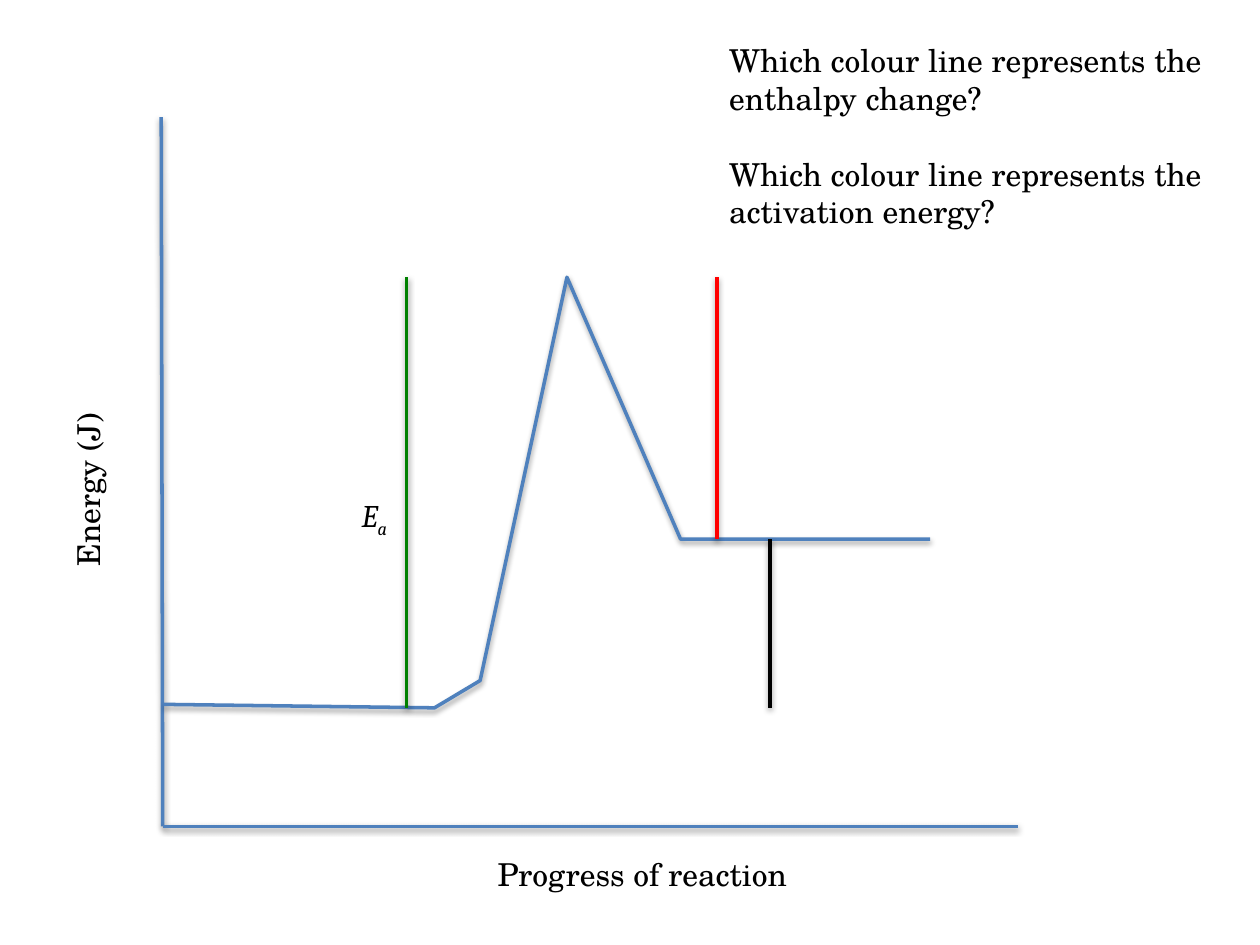
from lxml.etree import SubElement
from pptx import Presentation
from pptx.dml.color import RGBColor
from pptx.enum.shapes import MSO_CONNECTOR as Connector
from pptx.enum.text import MSO_AUTO_SIZE as AutoSize
from pptx.oxml.ns import qn
from pptx.util import Cm, Pt

BLUE, GREEN, RED, BLACK = "4F81BD", "008000", "FF0000", "000000"
SERIF = "TeX Gyre Schola"


def colour(code):
    """Turn a hex string into a colour."""
    return RGBColor.from_string(code)


def style_line(shape, code):
    """Give a line its colour, width and soft shadow below."""
    shape.line.color.rgb = colour(code)
    shape.line.width = Pt(2)
    effects = SubElement(shape._element.spPr, qn("a:effectLst"))
    shadow = SubElement(effects, qn("a:outerShdw"), blurRad="40000",
                        dist="20000", dir="5400000", rotWithShape="0")
    tint = SubElement(shadow, qn("a:srgbClr"), val=BLACK)
    SubElement(tint, qn("a:alpha"), val="38000")


def add_line(page, start, end, code):
    """Draw a straight line between two points in centimetres."""
    ends = [Cm(value) for value in (*start, *end)]
    style_line(page.shapes.add_connector(Connector.STRAIGHT, *ends), code)


def add_text(page, box, lines, font=SERIF, wrap=True, gap=0):
    """Place a text box with one paragraph per line and return it."""
    label = page.shapes.add_textbox(*[Cm(value) for value in box])
    frame = label.text_frame
    frame.word_wrap = wrap
    frame.auto_size = AutoSize.SHAPE_TO_FIT_TEXT
    frame.text = "\n".join(lines)
    for index, para in enumerate(frame.paragraphs):
        para.font.name = font
        para.font.size = Pt(18)
        para.font.color.rgb = colour(BLACK)
        para.space_before = Pt(gap if index else 0)
    return label


def add_axes(page, box):
    """Draw both axes and their titles."""
    left, top, width, height = box
    origin = (left + 0.03, top + height)
    add_line(page, (left, top), origin, BLUE)
    add_line(page, origin, (left + width, top + height), BLUE)
    add_text(page, (left + 6.53, top + height + 0.46, 9.5, 1.02),
             ["Progress of reaction"])
    title = add_text(page, (left - 6.22, top + 4.04, 9.5, 1.02), ["Energy (J)"])
    title.rotation = 270


def add_profile(page, box):
    """Draw the energy curve, the three coloured lines and the Ea label."""
    left, top = box[:2]
    peak, product, reactant = 3.23, 8.51, 11.91
    curve = [(0.05, 11.84), (5.51, reactant), (6.43, 11.36),
             (8.18, peak), (10.47, product), (15.5, product)]
    points = [(Cm(left + x), Cm(top + y)) for x, y in curve]
    builder = page.shapes.build_freeform(*points[0])
    builder.add_line_segments(points[1:], close=False)
    profile = builder.convert_to_shape()
    profile.fill.background()
    style_line(profile, BLUE)

    for x, start, end, code in [(4.95, peak, reactant, GREEN),
                                (12.27, product, reactant, BLACK),
                                (11.2, peak, product, RED)]:
        add_line(page, (left + x, top + start), (left + x, top + end), code)

    label = add_text(page, (left + 3.79, top + 7.52, 1.17, 1.02), ["E"],
                     font="Cambria", wrap=False)
    para = label.text_frame.paragraphs[0]
    para.font.italic = True
    span = para.add_run()
    span.text = "a"
    span._r.get_or_add_rPr().set("baseline", "-25000")


def add_questions(page, box):
    """Write the two questions one line apart."""
    add_text(page, box, ["Which colour line represents the enthalpy change?",
                         "Which colour line represents the activation energy?"],
             gap=21.5)


def main():
    """Build the slide and save it."""
    deck = Presentation()
    deck.slide_width, deck.slide_height = Cm(25.4), Cm(19.05)
    page = deck.slides.add_slide(deck.slide_layouts[6])
    diagram = (3.25, 2.36, 17.27, 14.3)
    add_axes(page, diagram)
    add_profile(page, diagram)
    add_questions(page, (14.45, 0.71, 10.95, 4.88))
    deck.save("out.pptx")


if __name__ == "__main__":
    main()
